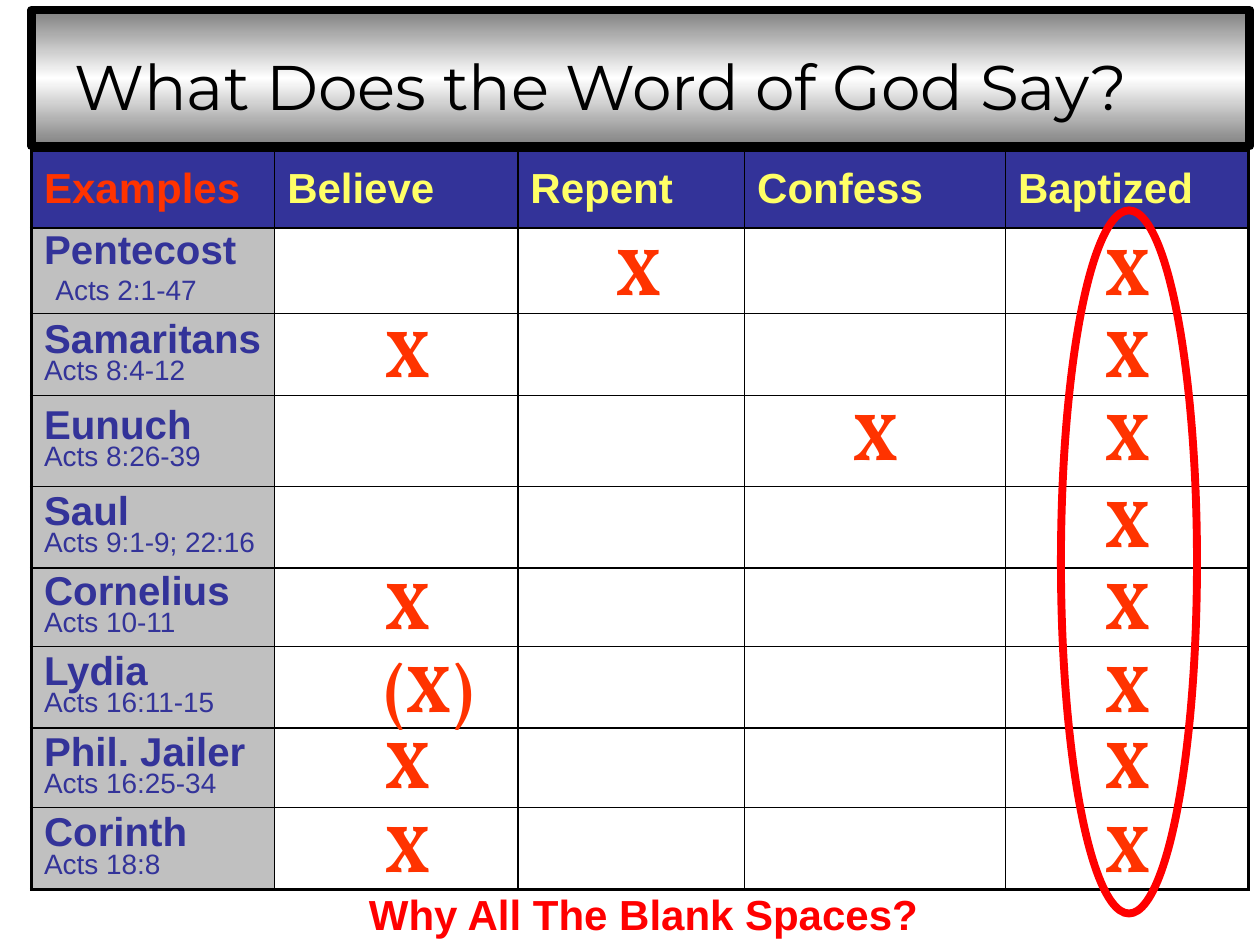
from copy import deepcopy

from pptx import Presentation
from pptx.dml.color import RGBColor
from pptx.enum.shapes import MSO_SHAPE as Shape
from pptx.enum.text import MSO_ANCHOR as Anchor, MSO_AUTO_SIZE as AutoSize, PP_ALIGN as Align
from pptx.oxml import parse_xml
from pptx.oxml.ns import nsdecls
from pptx.util import Inches, Pt

BLACK = RGBColor(0x00, 0x00, 0x00)
WHITE = RGBColor(0xFF, 0xFF, 0xFF)
GRAY = RGBColor(0x80, 0x80, 0x80)
SILVER = RGBColor(0xC0, 0xC0, 0xC0)
NAVY = RGBColor(0x33, 0x33, 0x99)
YELLOW = RGBColor(0xFF, 0xFF, 0x66)
ORANGE = RGBColor(0xFF, 0x33, 0x00)
RED = RGBColor(0xFF, 0x00, 0x00)

HEADINGS = ["Examples", "Believe", "Repent", "Confess", "Baptized"]
COLUMN_WIDTHS = [1.93, 1.93, 1.8, 2.07, 1.93]
HEADING_HEIGHT = 0.62
# Convert, passage, row height, top of the marks, marks by heading
EXAMPLES = [
    ("Pentecost", "Acts 2:1-47", 0.68, 1.77, {"Repent": "X", "Baptized": "X"}),
    ("Samaritans", "Acts 8:4-12", 0.65, 2.42, {"Believe": "X", "Baptized": "X"}),
    ("Eunuch", "Acts 8:26-39", 0.72, 3.08, {"Confess": "X", "Baptized": "X"}),
    ("Saul", "Acts 9:1-9; 22:16", 0.65, 3.77, {"Baptized": "X"}),
    ("Cornelius", "Acts 10-11", 0.62, 4.42, {"Believe": "X", "Baptized": "X"}),
    ("Lydia", "Acts 16:11-15", 0.65, 5.08, {"Believe": "(X)", "Baptized": "X"}),
    ("Phil. Jailer", "Acts 16:25-34", 0.63, 5.68, {"Believe": "X", "Baptized": "X"}),
    ("Corinth", "Acts 18:8", 0.65, 6.35, {"Believe": "X", "Baptized": "X"}),
]
MARK_LEFTS = {"Believe": 2.95, "Repent": 4.79, "Confess": 6.67, "Baptized": 8.67}
MARK_WIDTHS = {"X": 0.55, "(X)": 0.91}


def add_run(paragraph, text, size, color, font="Arial", bold=False):
    run = paragraph.add_run()
    run.text = text
    run.font.name = font
    run.font.size = Pt(size)
    run.font.bold = bold
    run.font.color.rgb = color


def set_borders(cell, widths):
    """Draw black borders; widths are points for left, right, top and bottom."""
    properties = cell._tc.get_or_add_tcPr()
    for position, (side, width) in enumerate(zip("LRTB", widths)):
        properties.insert(position, parse_xml(
            f'<a:ln{side} {nsdecls("a")} w="{Pt(width)}"><a:solidFill>'
            f'<a:srgbClr val="{BLACK}"/></a:solidFill></a:ln{side}>'))


def add_banner(slide, left, top, width, height):
    banner = slide.shapes.add_shape(
        Shape.RECTANGLE, Inches(left), Inches(top), Inches(width), Inches(height))
    banner.shadow.inherit = False
    banner.line.color.rgb = BLACK
    banner.line.width = Pt(5)
    banner.fill.gradient()
    banner.fill.gradient_angle = 90
    stops = banner.fill._xPr.gradFill.gsLst
    stops.insert(1, deepcopy(stops[0]))
    for stop, color, position in zip(
            banner.fill.gradient_stops, (GRAY, WHITE, GRAY), (0, 0.5, 1)):
        stop.color.rgb = color
        stop.position = position

    title = slide.shapes.title
    slide.shapes._spTree.append(title._element)  # in front of the banner
    title.left, title.top = Inches(left + 0.24), Inches(top + 0.25)
    title.width, title.height = Inches(width - 0.49), Inches(0.67)
    frame = title.text_frame
    frame.auto_size = AutoSize.NONE
    frame.word_wrap = False
    frame.vertical_anchor = Anchor.TOP
    frame.paragraphs[0].alignment = Align.LEFT
    add_run(frame.paragraphs[0], "What Does the Word of God Say?", 36, BLACK, "Montserrat")


def fill_example(cell, name, passage):
    frame = cell.text_frame
    add_run(frame.paragraphs[0], name, 23, NAVY, bold=True)
    add_run(frame.add_paragraph(), passage, 16, NAVY)
    for paragraph in frame.paragraphs:
        paragraph.line_spacing = 0.8


def add_examples_table(slide, left, top):
    heights = [HEADING_HEIGHT] + [example[2] for example in EXAMPLES]
    table = slide.shapes.add_table(
        len(heights), len(HEADINGS), Inches(left), Inches(top),
        Inches(sum(COLUMN_WIDTHS)), Inches(sum(heights))).table
    for column, width in zip(table.columns, COLUMN_WIDTHS):
        column.width = Inches(width)
    for row, height in zip(table.rows, heights):
        row.height = Inches(height)

    last_row, last_column = len(heights) - 1, len(HEADINGS) - 1
    for r in range(len(heights)):
        for c in range(len(HEADINGS)):
            cell = table.cell(r, c)
            cell.vertical_anchor = Anchor.MIDDLE
            cell.fill.solid()
            cell.fill.fore_color.rgb = NAVY if r == 0 else SILVER if c == 0 else WHITE
            on_edge = (c == 0, c == last_column, r == 0, r == last_row)
            set_borders(cell, [2.25 if edge else 1 for edge in on_edge])

    for c, heading in enumerate(HEADINGS):
        add_run(table.cell(0, c).text_frame.paragraphs[0], heading, 24,
                YELLOW if c else ORANGE, bold=True)
    for r, (name, passage, *_) in enumerate(EXAMPLES, start=1):
        fill_example(table.cell(r, 0), name, passage)
    pentecost_passage = table.cell(1, 0).text_frame.paragraphs[1]
    pentecost_passage.space_before = Pt(5)
    pentecost_passage._p.get_or_add_pPr().set("marL", str(Inches(0.09)))


def add_text(slide, text, left, top, width, height, size, color, font, wrap):
    box = slide.shapes.add_textbox(
        Inches(left), Inches(top), Inches(width), Inches(height))
    box.text_frame.word_wrap = wrap
    box.text_frame.auto_size = AutoSize.SHAPE_TO_FIT_TEXT
    add_run(box.text_frame.paragraphs[0], text, size, color, font, bold=True)


def add_marks(slide):
    for _, _, _, top, marks in EXAMPLES:
        for heading, mark in marks.items():
            add_text(slide, mark, MARK_LEFTS[heading], top, MARK_WIDTHS[mark], 0.73,
                     38, ORANGE, "Vollkorn", wrap=False)


def add_baptized_ring(slide, left, top, width, height):
    ring = slide.shapes.add_shape(
        Shape.OVAL, Inches(left), Inches(top), Inches(width), Inches(height))
    ring.shadow.inherit = False
    ring.fill.background()
    ring.line.color.rgb = RED
    ring.line.width = Pt(4.5)


def main():
    deck = Presentation()
    deck.slide_width, deck.slide_height = Inches(10), Inches(7.5)
    slide = deck.slides.add_slide(deck.slide_layouts.get_by_name("Title Only"))
    add_examples_table(slide, 0.25, 1.19)
    add_marks(slide)
    add_banner(slide, 0.25, 0.08, 9.67, 1.08)
    add_text(slide, "Why All The Blank Spaces?", 2.83, 7, 4.83, 0.5,
             24, RED, "Arial", wrap=True)
    add_baptized_ring(slide, 8.42, 1.67, 1.08, 5.58)
    deck.save("out.pptx")


if __name__ == "__main__":
    main()
